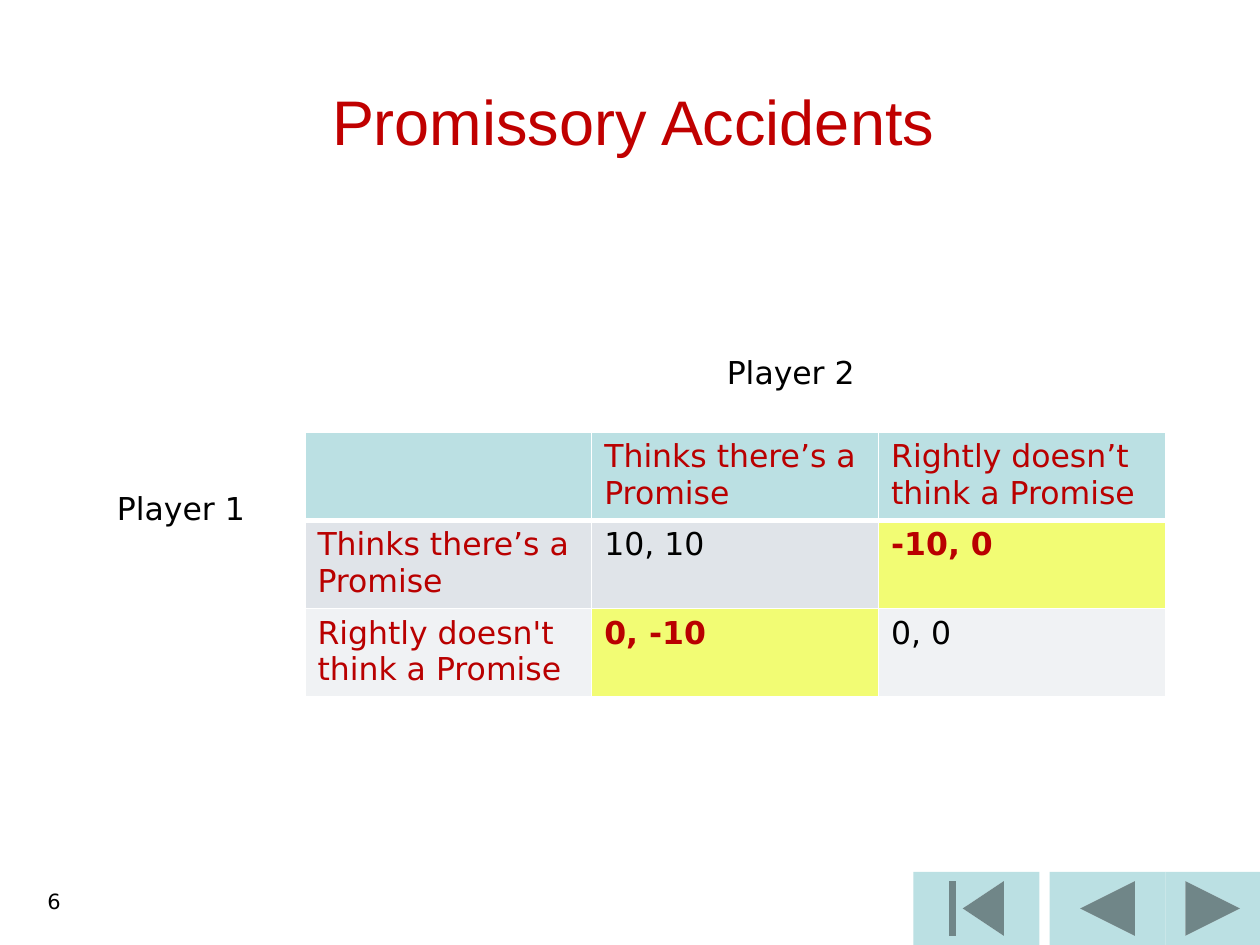
from lxml import etree
from pptx import Presentation
from pptx.dml.color import RGBColor
from pptx.enum.shapes import MSO_SHAPE
from pptx.enum.text import MSO_ANCHOR, PP_ALIGN
from pptx.oxml.ns import qn
from pptx.util import Inches, Pt

CENTER, LEFT, RIGHT = PP_ALIGN.CENTER, PP_ALIGN.LEFT, PP_ALIGN.RIGHT
MIDDLE = MSO_ANCHOR.MIDDLE
BACK = MSO_SHAPE.ACTION_BUTTON_BACK_OR_PREVIOUS
FIRST = MSO_SHAPE.ACTION_BUTTON_BEGINNING
NEXT = MSO_SHAPE.ACTION_BUTTON_FORWARD_OR_NEXT

SANS = "DejaVu Sans"
BLACK, WHITE, RED, DARK_RED = "000000", "FFFFFF", "C00000", "B90000"
TEAL, YELLOW = "BBE0E3", "F2FC74"

TITLE = "Promissory Accidents"
GAME = [
    ["", "Thinks there’s a Promise", "Rightly doesn’t think a Promise"],
    ["Thinks there’s a Promise", "10, 10", "-10, 0"],
    ["Rightly doesn't think a Promise", "0, -10", "0, 0"],
]
ROW_FILLS = [TEAL, "E0E4E9", "F0F2F4"]
ACCIDENTS = {(1, 2), (2, 1)}
# text, left, top, width, height, size, alignment
LABELS = [
    ("6", 0.08, 7, 0.5, 0.5, 12, RIGHT),
    ("Player 1", 0.83, 3.83, 1.23, 0.4, 18, LEFT),
    ("Player 2", 5.67, 2.75, 1.23, 0.4, 18, LEFT),
]
# shape, left, width
BUTTONS = [(BACK, 8.33, 0.92), (FIRST, 7.25, 1), (NEXT, 9.25, 0.75)]


def rgb(code):
    return RGBColor.from_string(code)


def box(left, top, width, height):
    return [Inches(n) for n in (left, top, width, height)]


def write(frame, text, size, color, font=SANS, align=LEFT, bold=False):
    para = frame.paragraphs[0]
    para.alignment = align
    run = para.add_run()
    run.text = text
    run.font.size, run.font.name, run.font.bold = Pt(size), font, bold
    run.font.color.rgb = rgb(color)


def edge(cell, side, width):
    """Draw a white border on one side (L, R, T or B) of a cell."""
    props = cell._tc.get_or_add_tcPr()
    line = etree.SubElement(props, qn("a:ln" + side), w=str(Pt(width)))
    fill = etree.SubElement(line, qn("a:solidFill"))
    etree.SubElement(fill, qn("a:srgbClr"), val=WHITE)


deck = Presentation()
deck.slide_width, deck.slide_height = Inches(10), Inches(7.5)
slide = deck.slides.add_slide(deck.slide_layouts[5])
shapes = slide.shapes

for kind, left, width in BUTTONS:
    button = shapes.add_shape(kind, *box(left, 6.92, width, 0.58))
    button.shadow.inherit = False
    button.fill.solid()
    button.fill.fore_color.rgb = rgb(TEAL)
    button.line.fill.background()

title = shapes.title
title.left, title.top, title.width, title.height = box(0.61, 0.33, 8.83, 1.25)
title.text_frame.vertical_anchor = MIDDLE
write(title.text_frame, TITLE, 36, RED, "Arial", CENTER)

table = shapes.add_table(3, 3, *box(2.42, 3.43, 6.83, 2.1)).table
for r, texts in enumerate(GAME):
    table.rows[r].height = Inches(0.7)
    for c, text in enumerate(texts):
        cell = table.cell(r, c)
        hit = (r, c) in ACCIDENTS
        head = r == 0 or c == 0
        edge(cell, "L", 1)
        edge(cell, "R", 1)
        edge(cell, "T", 3 if r == 1 else 1)
        edge(cell, "B", 3 if r == 0 else 1)
        cell.fill.solid()
        cell.fill.fore_color.rgb = rgb(YELLOW if hit else ROW_FILLS[r])
        if text:
            color = DARK_RED if head or hit else BLACK
            write(cell.text_frame, text, 18, color, bold=hit)

for text, left, top, width, height, size, align in LABELS:
    label = shapes.add_textbox(*box(left, top, width, height))
    write(label.text_frame, text, size, BLACK, align=align)

deck.save("out.pptx")
